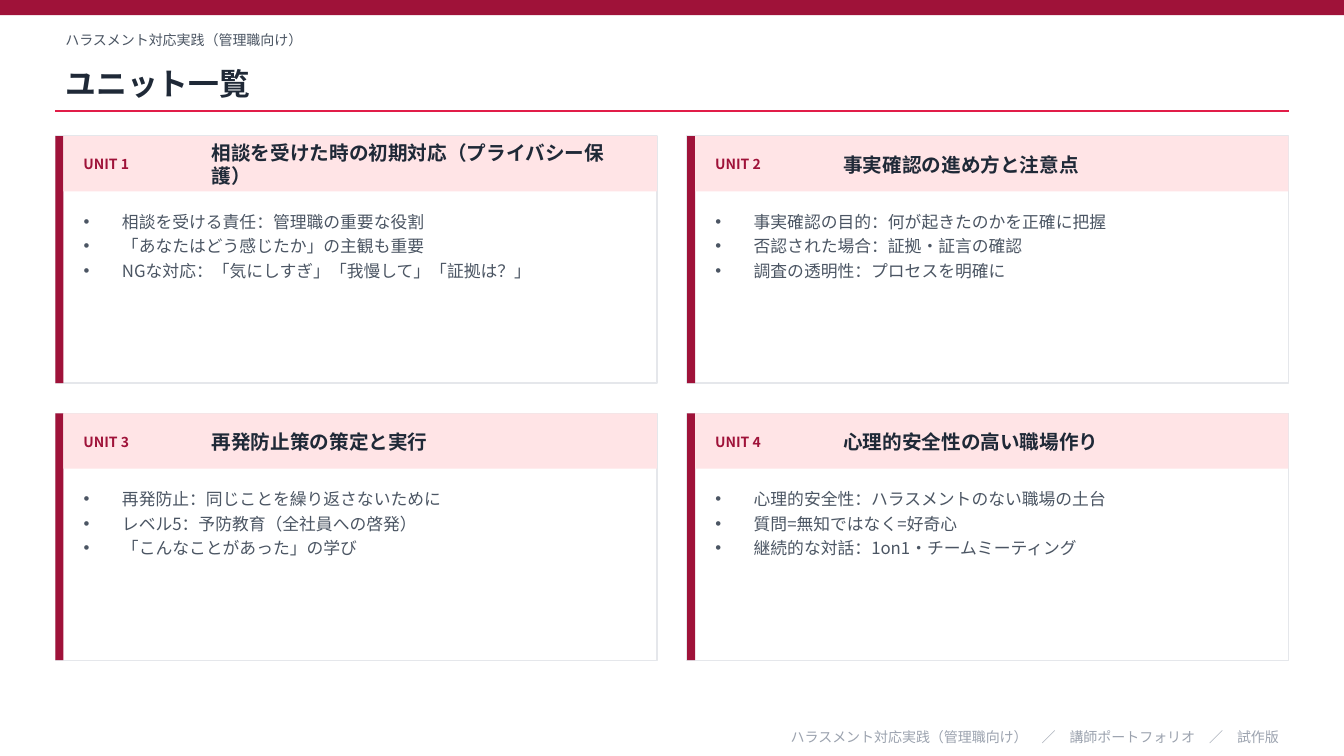
from lxml import etree
from pptx import Presentation
from pptx import util as u
from pptx.dml.color import RGBColor
from pptx.enum import shapes, text
from pptx.oxml import ns

FONT = "Noto Sans CJK JP"
WINE, ROSE, PINK = "9F1239", "E11D48", "FFE4E6"
INK, SLATE, MIST, EDGE = "1F2937", "4B5563", "9CA3AF", "E5E7EB"
WIDE, LEFT, SPAN = 13.33, 0.55, 12.23
TOP, TALL, GAP = 1.35, 2.45, 0.3

COURSE = "ハラスメント対応実践（管理職向け）"
UNITS = [
    ("相談を受けた時の初期対応（プライバシー保護）",
     ["相談を受ける責任：管理職の重要な役割",
      "「あなたはどう感じたか」の主観も重要",
      "NGな対応：「気にしすぎ」「我慢して」「証拠は？」"]),
    ("事実確認の進め方と注意点",
     ["事実確認の目的：何が起きたのかを正確に把握",
      "否認された場合：証拠・証言の確認",
      "調査の透明性：プロセスを明確に"]),
    ("再発防止策の策定と実行",
     ["再発防止：同じことを繰り返さないために",
      "レベル5：予防教育（全社員への啓発）",
      "「こんなことがあった」の学び"]),
    ("心理的安全性の高い職場作り",
     ["心理的安全性：ハラスメントのない職場の土台",
      "質問=無知ではなく=好奇心",
      "継続的な対話：1on1・チームミーティング"]),
]


def color(code):
    return RGBColor.from_string(code)


def add(parent, tag, **attrs):
    return etree.SubElement(parent, ns.qn(tag), attrs)


def rect(slide, x, y, w, h, fill, edge=None):
    box = slide.shapes.add_shape(shapes.MSO_SHAPE.RECTANGLE,
                                 *map(u.Inches, (x, y, w, h)))
    box.shadow.inherit = False
    box.fill.solid()
    box.fill.fore_color.rgb = color(fill)
    if edge:
        box.line.color.rgb = color(edge)
        box.line.width = u.Pt(1)
    else:
        box.line.fill.background()


def write(slide, x, y, w, h, lines, size, ink, bold=False, holder=None,
          align=text.PP_ALIGN.LEFT, anchor=text.MSO_ANCHOR.MIDDLE,
          bullet=False):
    """Fill a new text box, or the given placeholder brought to the front."""
    area = [u.Inches(n) for n in (x, y, w, h)]
    if holder is None:
        holder = slide.shapes.add_textbox(*area)
    else:
        holder.left, holder.top, holder.width, holder.height = area
        slide.shapes._spTree.append(holder._element)
    frame = holder.text_frame
    frame.word_wrap = True
    frame.auto_size = text.MSO_AUTO_SIZE.NONE
    frame.vertical_anchor = anchor
    frame.text = "\n".join(lines)
    for para in frame.paragraphs:
        para.alignment = align
        para.space_before = u.Pt(0)
        if bullet:
            para.space_after = u.Pt(3)
            props = para._p.get_or_add_pPr()
            hang = u.Inches(0.38)
            props.set("marL", str(hang))
            props.set("indent", str(-hang))
            add(props, "a:buFont", typeface="Arial")
            add(props, "a:buChar", char="•")
        for run in para.runs:
            font = run.font
            font.size, font.bold, font.name = u.Pt(size), bold, FONT
            font.color.rgb = color(ink)
            add(run._r.get_or_add_rPr(), "a:ea", typeface=FONT)


def header(slide):
    rect(slide, 0, 0, WIDE, 0.15, WINE)
    write(slide, LEFT, 0.25, SPAN, 0.3, [COURSE], 10, SLATE)
    write(slide, LEFT, 0.55, SPAN, 0.55, ["ユニット一覧"], 22, INK,
          bold=True, holder=slide.shapes.title)
    ends = [u.Inches(n) for n in (LEFT, 1.1, LEFT + SPAN, 1.1)]
    rule = slide.shapes.add_connector(shapes.MSO_CONNECTOR.STRAIGHT, *ends)
    rule.line.color.rgb = color(ROSE)
    rule.line.width = u.Pt(1)
    add(rule._element.spPr, "a:effectLst")


def card(slide, x, y, w, h, label, name, points, holder):
    bar, band = 0.08, 0.55
    rect(slide, x, y, w, h, "FFFFFF", EDGE)
    rect(slide, x, y, bar, h, WINE)
    rect(slide, x + bar, y, w - bar, band, PINK)
    inner = x + bar + 0.1
    write(slide, inner, y + 0.08, 1.2, 0.4, [label], 10, WINE, bold=True)
    write(slide, x + 1.45, y + 0.08, w - 1.6, 0.4, [name], 14, INK, bold=True)
    write(slide, inner, y + 0.7, w - 0.36, h - 0.85, points, 12, SLATE,
          holder=holder, anchor=text.MSO_ANCHOR.TOP, bullet=True)


def footer(slide):
    note = "　／　".join([COURSE, "講師ポートフォリオ", "試作版"])
    write(slide, LEFT, 7.2, SPAN, 0.22, [note], 10, MIST,
          align=text.PP_ALIGN.RIGHT)


def main():
    deck = Presentation()
    deck.slide_width, deck.slide_height = u.Inches(WIDE), u.Inches(7.5)
    # The Comparison layout has a title and four body placeholders.
    slide = deck.slides.add_slide(deck.slide_layouts.get_by_name("Comparison"))
    bodies = list(slide.placeholders)[1:]
    header(slide)
    width = (SPAN - GAP) / 2
    for i, ((name, points), body) in enumerate(zip(UNITS, bodies)):
        row, col = divmod(i, 2)
        card(slide, LEFT + col * (width + GAP), TOP + row * (TALL + GAP),
             width, TALL, f"UNIT {i + 1}", name, points, body)
    footer(slide)
    deck.save("out.pptx")


if __name__ == "__main__":
    main()
